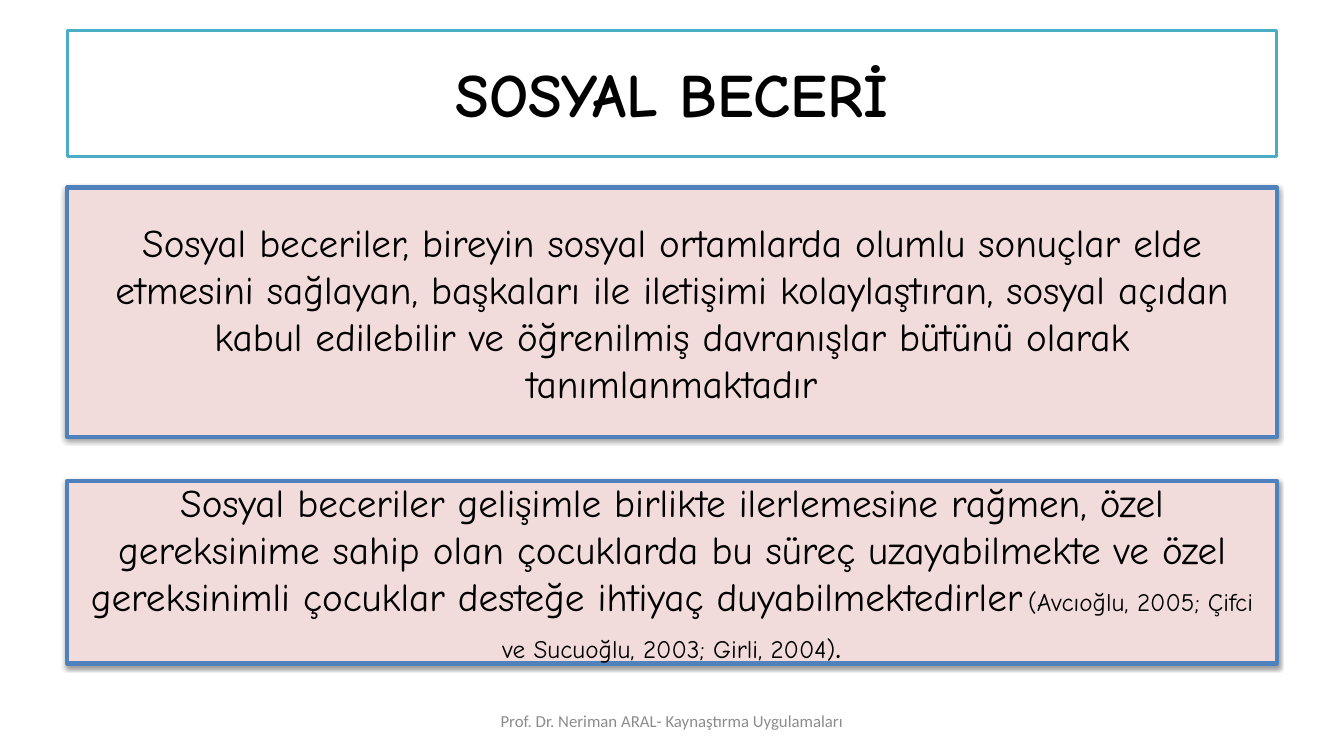
import pptx
import pptx.dml.color
import pptx.enum.shapes
import pptx.enum.text
import pptx.oxml
import pptx.oxml.ns
import pptx.util

Pt = pptx.util.Pt
HAND_FONT = "Comic Neue"
MARGIN = 48
CONTENT_WIDTH = 864
SHADOW = (
    '<a:outerShdw %s blurRad="39400" dist="20300" dir="5400000" rotWithShape="0">'
    '<a:srgbClr val="000000"><a:alpha val="38000"/></a:srgbClr></a:outerShdw>'
)


def rgb(value):
    """Turn a hex string into a colour."""
    return pptx.dml.color.RGBColor.from_string(value)


def place(shape, left, top, width, height):
    """Set the position and size of a shape in points."""
    shape.left, shape.top = Pt(left), Pt(top)
    shape.width, shape.height = Pt(width), Pt(height)


def paint(shape, fill, line, line_width):
    """Give a shape a solid fill and outline."""
    shape.fill.solid()
    shape.fill.fore_color.rgb = rgb(fill)
    shape.line.color.rgb = rgb(line)
    shape.line.width = Pt(line_width)


def write(shape, runs):
    """Write one centred paragraph of (text, size, font, colour, bold) runs."""
    frame = shape.text_frame
    frame.word_wrap = True
    frame.auto_size = pptx.enum.text.MSO_AUTO_SIZE.NONE
    frame.vertical_anchor = pptx.enum.text.MSO_ANCHOR.MIDDLE
    paragraph = frame.paragraphs[0]
    paragraph.alignment = pptx.enum.text.PP_ALIGN.CENTER
    for text, size, font, colour, bold in runs:
        run = paragraph.add_run()
        run.text = text
        run.font.size = Pt(size)
        run.font.name = font
        run.font.bold = bold
        run.font.color.rgb = rgb(colour)


def add_title(slide, text):
    """Fill the title placeholder as a framed heading."""
    title = slide.shapes.title
    place(title, MARGIN, 21.6, CONTENT_WIDTH, 90)
    paint(title, "FFFFFF", "4BACC6", 2)
    write(title, [(text, 44, HAND_FONT, "000000", True)])


def add_footer(slide, text):
    """Add the grey footer line."""
    footer = slide.shapes.add_textbox(Pt(328), Pt(500.5), Pt(304), Pt(28.75))
    write(footer, [(text, 12, "Calibri", "8C8C8C", False)])


def add_panel(slide, top, height, runs):
    """Add a pink panel with a soft shadow below it."""
    panel = slide.shapes.add_shape(
        pptx.enum.shapes.MSO_SHAPE.RECTANGLE,
        Pt(MARGIN), Pt(top), Pt(CONTENT_WIDTH), Pt(height),
    )
    paint(panel, "F2DCDB", "4F81BD", 3)
    panel.shadow.inherit = False
    effects = panel._element.spPr.find(pptx.oxml.ns.qn("a:effectLst"))
    effects.append(pptx.oxml.parse_xml(SHADOW % pptx.oxml.ns.nsdecls("a")))
    write(panel, runs)


def main():
    """Build and save the slide."""
    presentation = pptx.Presentation()
    presentation.slide_width, presentation.slide_height = Pt(960), Pt(540)
    slide = presentation.slides.add_slide(presentation.slide_layouts[5])
    add_title(slide, "SOSYAL BECERİ")
    add_footer(slide, "Prof. Dr. Neriman ARAL- Kaynaştırma Uygulamaları")
    definition = (
        "Sosyal beceriler, bireyin sosyal ortamlarda olumlu sonuçlar elde "
        "etmesini sağlayan, başkaları ile iletişimi kolaylaştıran, sosyal açıdan "
        "kabul edilebilir ve öğrenilmiş davranışlar bütünü olarak tanımlanmaktadır"
    )
    support = (
        "Sosyal beceriler gelişimle birlikte ilerlemesine rağmen, özel "
        "gereksinime sahip olan çocuklarda bu süreç uzayabilmekte ve özel "
        "gereksinimli çocuklar desteğe ihtiyaç duyabilmektedirler"
    )
    citation = "(Avcıoğlu, 2005; Çifci ve Sucuoğlu, 2003; Girli, 2004)"
    add_panel(slide, 134, 178, [(definition, 28, HAND_FONT, "000000", False)])
    add_panel(slide, 343.5, 130.5, [
        (support, 28, HAND_FONT, "000000", False),
        (" ", 18, "Calibri", "FFFFFF", False),
        (citation, 18, HAND_FONT, "000000", False),
        (".", 28, HAND_FONT, "000000", False),
    ])
    presentation.save("out.pptx")


if __name__ == "__main__":
    main()
